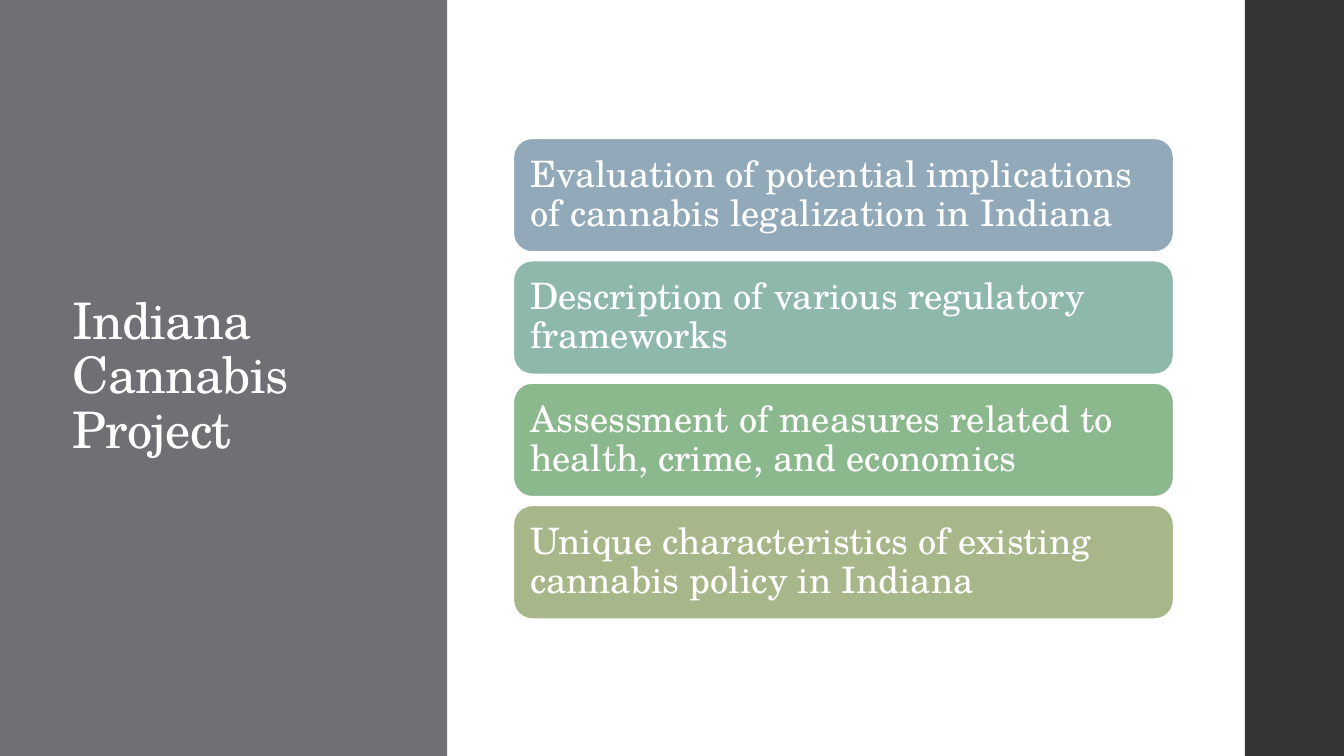
from dataclasses import dataclass

from pptx import Presentation
from pptx.dml.color import RGBColor
from pptx.enum.shapes import MSO_SHAPE as Preset
from pptx.enum.text import MSO_ANCHOR as Anchor, PP_ALIGN as Align
from pptx.shapes.autoshape import Shape
from pptx.slide import Slide
from pptx.text.text import TextFrame
from pptx.util import Pt

FONT = "TeX Gyre Schola"
WHITE = "FFFFFF"
SLIDE_WIDTH, SLIDE_HEIGHT = 960, 540
CARD_LEFT, CARD_TOP, CARD_WIDTH, CARD_HEIGHT = 366.7, 98.8, 471.6, 81.2
CARD_PITCH = 87.4


@dataclass(frozen=True)
class Panel:
    left: float
    width: float
    fill: str


@dataclass(frozen=True)
class Topic:
    text: str
    fill: str


PANELS = [
    Panel(0, 319.5, "6F6F74"),
    Panel(889.2, SLIDE_WIDTH - 889.2, "353537"),
]
TOPICS = [
    Topic("Evaluation of potential implications of cannabis legalization in Indiana", "92A9B9"),
    Topic("Description of various regulatory frameworks", "8FB8AD"),
    Topic("Assessment of measures related to health, crime, and economics", "8CB88E"),
    Topic("Unique characteristics of existing cannabis policy in Indiana", "A7B789"),
]


def color(value: str) -> RGBColor:
    return RGBColor.from_string(value)


def add_block(slide: Slide, preset: Preset, left: float, top: float,
              width: float, height: float, fill: str) -> Shape:
    block = slide.shapes.add_shape(preset, Pt(left), Pt(top), Pt(width), Pt(height))
    block.shadow.inherit = False
    block.fill.solid()
    block.fill.fore_color.rgb = color(fill)
    block.line.fill.background()
    return block


def write(frame: TextFrame, text: str, size: float) -> None:
    frame.text = text
    frame.word_wrap = True
    frame.vertical_anchor = Anchor.MIDDLE
    paragraph = frame.paragraphs[0]
    paragraph.alignment = Align.LEFT
    paragraph.line_spacing = 0.9
    font = paragraph.runs[0].font
    font.name = FONT
    font.size = Pt(size)
    font.color.rgb = color(WHITE)


def add_panel(slide: Slide, panel: Panel) -> None:
    add_block(slide, Preset.RECTANGLE, panel.left, 0, panel.width, SLIDE_HEIGHT, panel.fill)


def add_title(slide: Slide, text: str) -> None:
    title = slide.shapes.title
    title.left, title.top, title.width, title.height = Pt(44.6), Pt(65.5), Pt(213.8), Pt(408.2)
    write(title.text_frame, text, 36)
    title.text_frame.paragraphs[0].runs[0].font._element.set("spc", "-50")
    slide.shapes._spTree.append(title._element)


def add_topic(slide: Slide, topic: Topic, top: float) -> None:
    card = add_block(slide, Preset.ROUNDED_RECTANGLE, CARD_LEFT, top,
                     CARD_WIDTH, CARD_HEIGHT, topic.fill)
    card.line.color.rgb = color(WHITE)
    card.line.width = Pt(1.1)
    frame = card.text_frame
    frame.margin_left = frame.margin_right = Pt(8)
    frame.margin_top = frame.margin_bottom = Pt(4)
    write(frame, topic.text, 26)


def main() -> None:
    deck = Presentation()
    deck.slide_width, deck.slide_height = Pt(SLIDE_WIDTH), Pt(SLIDE_HEIGHT)
    slide = deck.slides.add_slide(deck.slide_layouts.get_by_name("Title Only"))
    slide.background.fill.solid()
    slide.background.fill.fore_color.rgb = color(WHITE)
    for panel in PANELS:
        add_panel(slide, panel)
    add_title(slide, "Indiana Cannabis Project")
    for row, topic in enumerate(TOPICS):
        add_topic(slide, topic, CARD_TOP + row * CARD_PITCH)
    deck.save("out.pptx")


if __name__ == "__main__":
    main()
